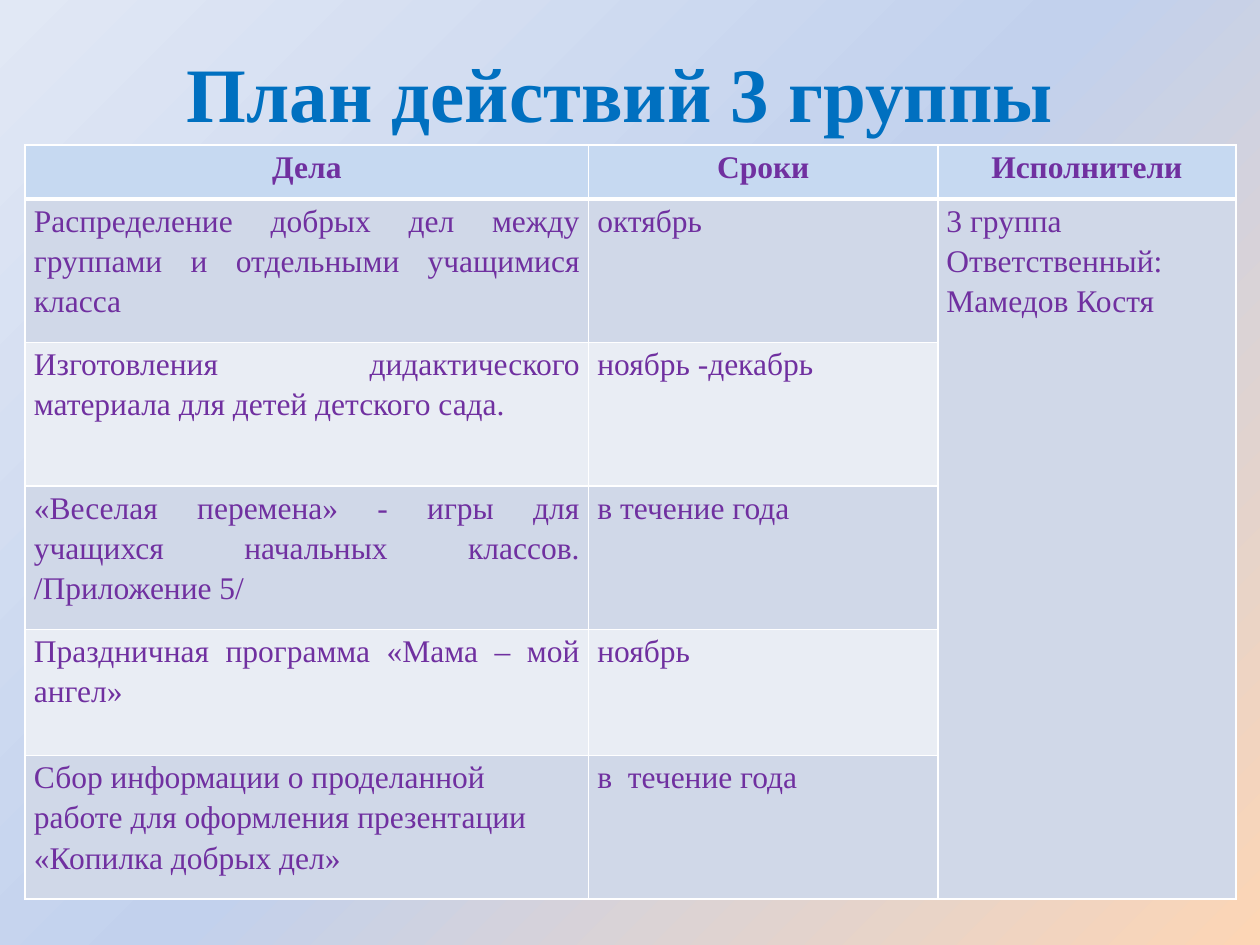
from copy import deepcopy

from lxml.etree import SubElement
from pptx import Presentation
from pptx.dml.color import RGBColor
from pptx.enum.text import MSO_ANCHOR as Anchor, PP_ALIGN as Align
from pptx.oxml.ns import qn
from pptx.util import Pt

COLORS = {
    "title": "0070C0",
    "text": "7030A0",
    "header": "C6D9F1",
    "odd_row": "D0D8E8",
    "even_row": "E9EDF4",
    "border": "FFFFFF",
}
BACKGROUND_STOPS = [(0, "FCD5B5"), (0.5, "C2D1ED"), (1, "E1E8F5")]

HEADERS = ["Дела", "Сроки", "Исполнители"]
TASKS = [
    ("Распределение добрых дел между группами и отдельными учащимися класса", "октябрь"),
    ("Изготовления дидактического материала для детей детского сада.", "ноябрь -декабрь"),
    ("«Веселая перемена» - игры для учащихся начальных классов. /Приложение 5/", "в течение года"),
    ("Праздничная программа «Мама – мой ангел»", "ноябрь"),
    ("Сбор информации о проделанной работе для оформления презентации «Копилка добрых дел»", "в  течение года"),
]
PERFORMERS = ["3 группа", "Ответственный:", "Мамедов Костя"]
COLUMN_WIDTHS = [322, 199.5, 170.5]
ROW_HEIGHTS = [31, 82, 82, 82, 72, 82]


class PlanSlide:
    font = "Times New Roman"
    title_size = 44
    text_size = 18
    line_spacing = 1.15

    def __init__(self, presentation):
        self.slide = presentation.slides.add_slide(presentation.slide_layouts[5])

    def background(self, stops, angle):
        fill = self.slide.background.fill
        fill.gradient()
        fill.gradient_angle = angle
        stop_list = self.slide.element.xpath(".//a:gsLst")[0]
        stop_list.append(deepcopy(stop_list[0]))
        for stop, (position, color) in zip(fill.gradient_stops, stops):
            stop.position = position
            stop.color.rgb = RGBColor.from_string(color)

    def run(self, paragraph, text, size, color, bold=False):
        run = paragraph.add_run()
        run.text = text
        run.font.name = self.font
        run.font.size = Pt(size)
        run.font.bold = bold
        run.font.color.rgb = RGBColor.from_string(COLORS[color])

    def title(self, text, left, top, width, height):
        shape = self.slide.shapes.title
        shape.left, shape.top = Pt(left), Pt(top)
        shape.width, shape.height = Pt(width), Pt(height)
        shape.text_frame.vertical_anchor = Anchor.MIDDLE
        paragraph = shape.text_frame.paragraphs[0]
        paragraph.alignment = Align.CENTER
        self.run(paragraph, text, self.title_size, "title", bold=True)

    def table(self, left, top, widths, heights):
        table = self.slide.shapes.add_table(
            len(heights), len(widths), Pt(left), Pt(top), Pt(sum(widths)), Pt(sum(heights))
        ).table
        table.horz_banding = False
        for column, width in zip(table.columns, widths):
            column.width = Pt(width)
        for index, (row, height) in enumerate(zip(table.rows, heights)):
            row.height = Pt(height)
            fill = "header" if index == 0 else "odd_row" if index % 2 else "even_row"
            for cell in row.cells:
                self.cell_style(cell, fill, 3 if index == 1 else 1, 3 if index == 0 else 1)
        return table

    def cell_style(self, cell, fill, top_line, bottom_line):
        cell.margin_left = cell.margin_right = Pt(5)
        cell.margin_top = cell.margin_bottom = Pt(0)
        properties = cell._tc.get_or_add_tcPr()
        for side, width in (("L", 1), ("R", 1), ("T", top_line), ("B", bottom_line)):
            line = SubElement(properties, qn(f"a:ln{side}"), w=str(Pt(width)))
            solid = SubElement(line, qn("a:solidFill"))
            SubElement(solid, qn("a:srgbClr"), val=COLORS["border"])
        cell.fill.solid()
        cell.fill.fore_color.rgb = RGBColor.from_string(COLORS[fill])

    def cell_text(self, cell, lines, alignment=Align.LEFT, bold=False, space_after=0):
        frame = cell.text_frame
        for index, line in enumerate(lines):
            paragraph = frame.add_paragraph() if index else frame.paragraphs[0]
            paragraph.alignment = alignment
            paragraph.line_spacing = self.line_spacing
            paragraph.space_after = Pt(space_after)
            self.run(paragraph, line, self.text_size, "text", bold)


def main():
    presentation = Presentation()
    presentation.slide_width, presentation.slide_height = Pt(720), Pt(540)

    plan = PlanSlide(presentation)
    plan.background(BACKGROUND_STOPS, 135)
    plan.title("План действий 3 группы ", 36, 21.6, 648, 61.2)

    table = plan.table(14.4, 82.8, COLUMN_WIDTHS, ROW_HEIGHTS)
    for column, header in enumerate(HEADERS):
        plan.cell_text(table.cell(0, column), [header], Align.CENTER, bold=True)
    for row, (task, term) in enumerate(TASKS, 1):
        if row < len(TASKS):
            plan.cell_text(table.cell(row, 0), [task], Align.JUSTIFY, space_after=10)
        else:
            plan.cell_text(table.cell(row, 0), [task])
        plan.cell_text(table.cell(row, 1), [term])
    table.cell(1, 2).merge(table.cell(len(TASKS), 2))
    plan.cell_text(table.cell(1, 2), PERFORMERS)

    presentation.save("out.pptx")


if __name__ == "__main__":
    main()
